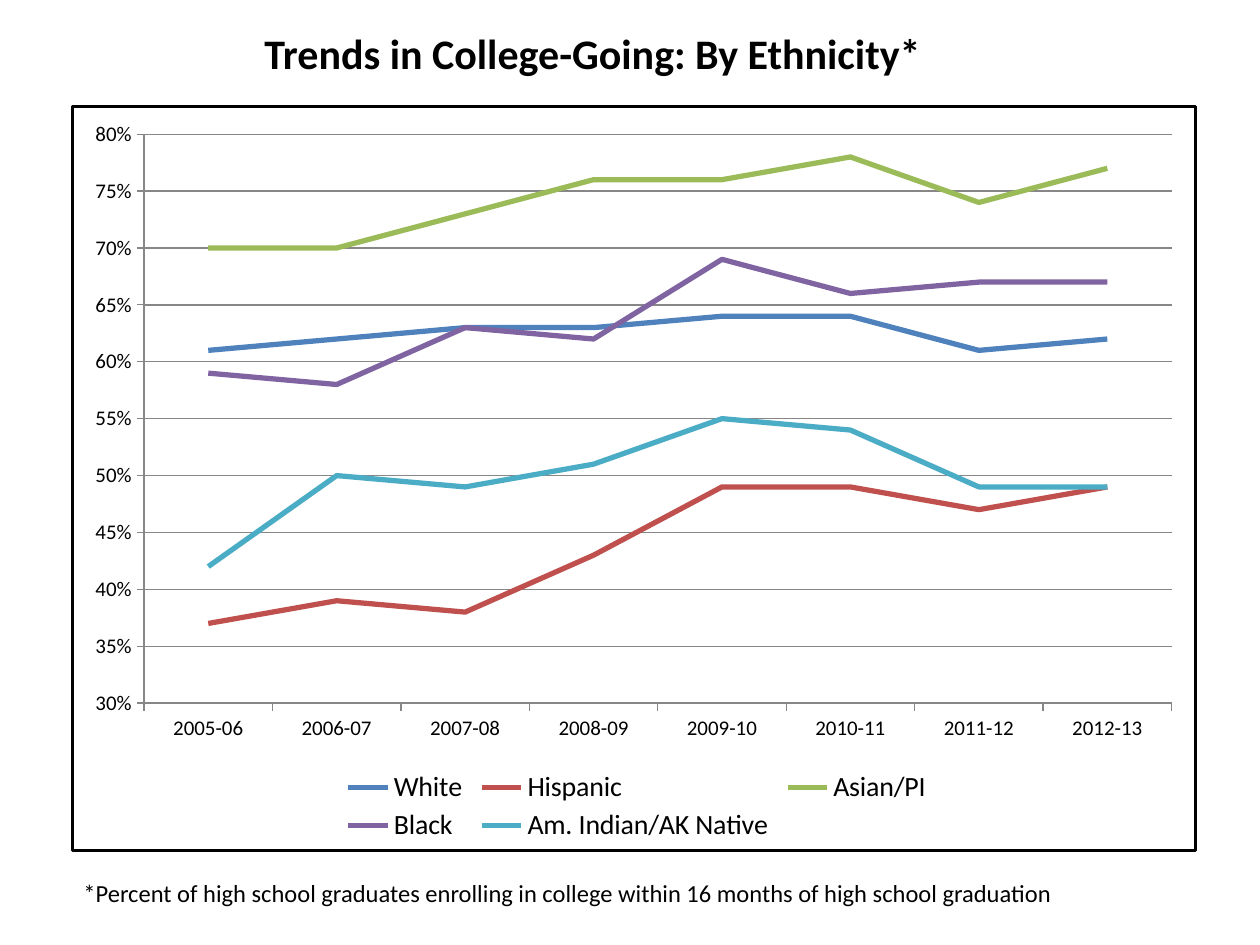
from lxml import etree
from pptx import Presentation
from pptx.chart.data import CategoryChartData
from pptx.dml.color import RGBColor
from pptx.enum.chart import XL_CHART_TYPE, XL_LEGEND_POSITION, XL_TICK_MARK
from pptx.oxml import parse_xml
from pptx.oxml.ns import nsdecls, qn
from pptx.util import Emu, Pt

LINE_CHART = XL_CHART_TYPE.LINE
BOTTOM = XL_LEGEND_POSITION.BOTTOM
OUTSIDE = XL_TICK_MARK.OUTSIDE

BLACK = RGBColor(0x00, 0x00, 0x00)
GRAY = RGBColor(0x87, 0x87, 0x87)
BLUE = RGBColor(0x4F, 0x81, 0xBD)
RED = RGBColor(0xC0, 0x50, 0x4D)
GREEN = RGBColor(0x9B, 0xBB, 0x59)
PURPLE = RGBColor(0x80, 0x64, 0xA2)
TEAL = RGBColor(0x4B, 0xAC, 0xC6)

FONT = "Calibri"
PX_PER_INCH = 126
CHART_BOX = (71, 105, 1126, 747)
PLOT_BOX = (143, 133, 1030, 571)
LEGEND_BOX = (337, 768, 600, 80)

YEARS = ["2005-06", "2006-07", "2007-08", "2008-09",
         "2009-10", "2010-11", "2011-12", "2012-13"]
RATES = [
    ("White", BLUE, [0.61, 0.62, 0.63, 0.63, 0.64, 0.64, 0.61, 0.62]),
    ("Hispanic", RED, [0.37, 0.39, 0.38, 0.43, 0.49, 0.49, 0.47, 0.49]),
    ("Asian/PI", GREEN, [0.70, 0.70, 0.73, 0.76, 0.76, 0.78, 0.74, 0.77]),
    ("Black", PURPLE, [0.59, 0.58, 0.63, 0.62, 0.69, 0.66, 0.67, 0.67]),
    ("Am. Indian/AK Native", TEAL,
     [0.42, 0.50, 0.49, 0.51, 0.55, 0.54, 0.49, 0.49]),
]


def px(*lengths):
    return [Emu(round(n * 914400 / PX_PER_INCH)) for n in lengths]


def manual_layout(box, inner=False):
    """Layout element placing a slide box as fractions of the chart."""
    left, top, width, height = CHART_BOX
    fractions = {"x": (box[0] - left) / width, "y": (box[1] - top) / height,
                 "w": box[2] / width, "h": box[3] / height}
    layout = etree.Element(qn("c:layout"))
    manual = etree.SubElement(layout, qn("c:manualLayout"))
    if inner:
        etree.SubElement(manual, qn("c:layoutTarget")).set("val", "inner")
    for mode in ("xMode", "yMode"):
        etree.SubElement(manual, qn("c:" + mode)).set("val", "edge")
    for tag, value in fractions.items():
        etree.SubElement(manual, qn("c:" + tag)).set("val", f"{value:.4f}")
    return layout


prs = Presentation()
prs.slide_width, prs.slide_height = px(1260, 945)
slide = prs.slides.add_slide(prs.slide_layouts[6])

# Title and footnote
for box, wording, size, bold, wrap in [
    ((252, 21, 683, 63), "Trends in College-Going: By Ethnicity*",
     24, True, True),
    ((71, 872, 1003, 43),
     "*Percent of high school graduates enrolling in college "
     "within 16 months of high school graduation", 14, False, False),
]:
    frame = slide.shapes.add_textbox(*px(*box)).text_frame
    frame.word_wrap = wrap
    run = frame.paragraphs[0].add_run()
    run.text = wording
    run.font.name = FONT
    run.font.size = Pt(size)
    run.font.bold = bold
    run.font.color.rgb = BLACK

# College-going rates
data = CategoryChartData(number_format="0%")
data.categories = YEARS
for group, _, rates in RATES:
    data.add_series(group, rates)
chart = slide.shapes.add_chart(LINE_CHART, *px(*CHART_BOX), data).chart
chart.has_title = False
chart.font.name = FONT
chart.font.size = Pt(10)
chart.font.color.rgb = BLACK

for line, (_, color, _) in zip(chart.plots[0].series, RATES):
    line.smooth = False
    line.format.line.color.rgb = color
    line.format.line.width = Pt(3)

# Axes and gridlines
years_axis, rate_axis = chart.category_axis, chart.value_axis
rate_axis.minimum_scale = 0.3
rate_axis.maximum_scale = 0.8
rate_axis.major_unit = 0.05
rate_axis.tick_labels.number_format = "0%"
rate_axis.tick_labels.number_format_is_linked = False
rate_axis.has_major_gridlines = True
for axis in (years_axis, rate_axis):
    axis.major_tick_mark = OUTSIDE
    axis.tick_labels.font.size = Pt(12)
    axis.format.line.color.rgb = GRAY
    axis.format.line.width = Pt(0.75)
rate_axis.major_gridlines.format.line.color.rgb = GRAY
rate_axis.major_gridlines.format.line.width = Pt(0.75)

# Legend
chart.has_legend = True
legend = chart.legend
legend.position = BOTTOM
legend.include_in_layout = False
legend.font.size = Pt(16)

# Placement of plot and legend inside the chart
chart_space = chart.element
plot_area = chart_space.find(".//" + qn("c:plotArea"))
legend_part = chart_space.find(".//" + qn("c:legend"))
for part in (plot_area, legend_part):
    for layout in part.findall(qn("c:layout")):
        part.remove(layout)
plot_area.insert(0, manual_layout(PLOT_BOX, inner=True))
legend_part.find(qn("c:legendPos")).addnext(manual_layout(LEGEND_BOX))

# Chart border
chart_space.find(qn("c:chart")).addnext(parse_xml(
    f'<c:spPr {nsdecls("c", "a")}><a:noFill/><a:ln w="{Pt(1.5)}">'
    f'<a:solidFill><a:srgbClr val="{BLACK}"/></a:solidFill></a:ln></c:spPr>'))

prs.save("out.pptx")
